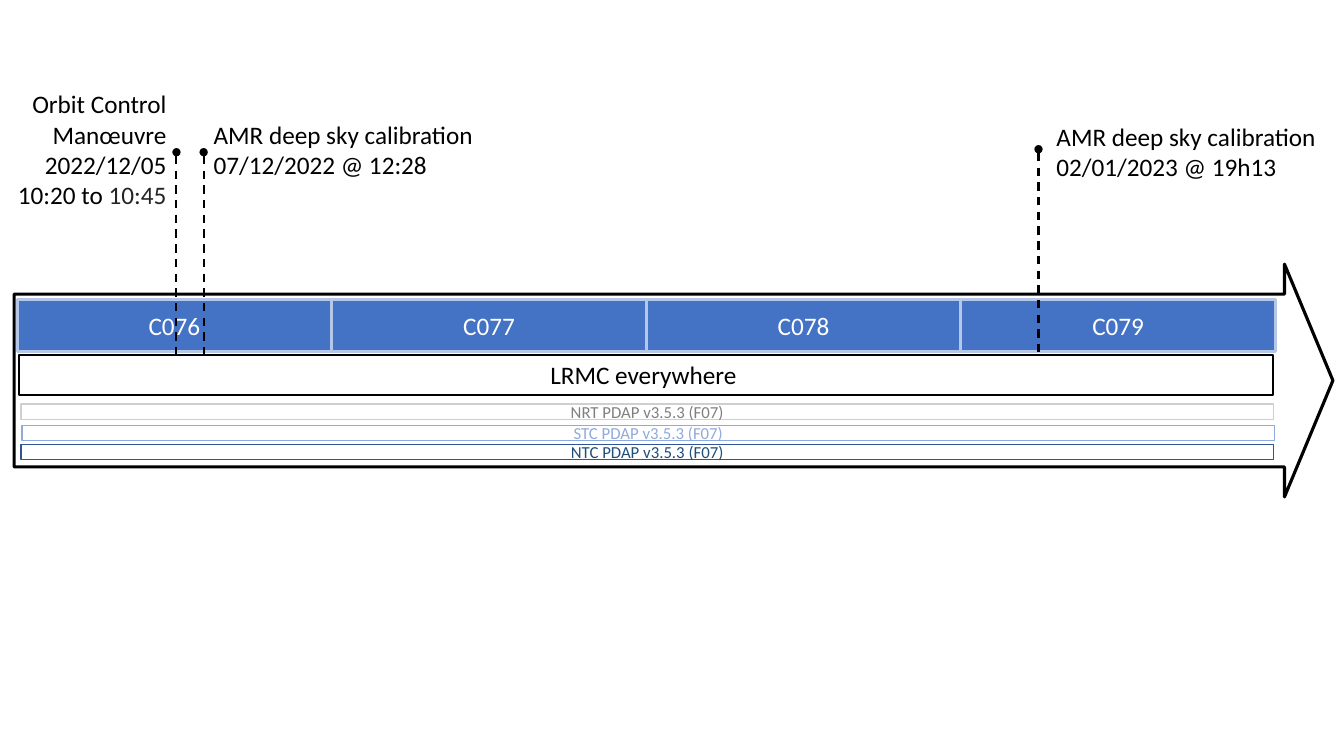
from lxml import etree
from pptx import Presentation
from pptx.dml.color import RGBColor
from pptx.enum.dml import MSO_LINE
from pptx.enum.shapes import MSO_CONNECTOR, MSO_SHAPE
from pptx.enum.text import MSO_ANCHOR, PP_ALIGN
from pptx.oxml.ns import qn
from pptx.util import Inches, Pt

COLORS = {
    "black": "000000", "white": "FFFFFF", "ink": "242424",
    "cycle": "4472C4", "cycle_line": "B4C7E7",
    "nrt": "808080", "nrt_line": "D0CECE", "stc": "8FAADC",
    "ntc": "1F4E79", "ntc_line": "2F5597",
}


def rgb(name):
    return RGBColor.from_string(COLORS[name])


def add_box(shape, x, y, w, h, fill, line, width, text="", size=18, color="black"):
    sp = s.shapes.add_shape(shape, Inches(x), Inches(y), Inches(w), Inches(h))
    sp.shadow.inherit = False
    sp.fill.solid()
    sp.fill.fore_color.rgb = rgb(fill)
    sp.line.color.rgb = rgb(line)
    sp.line.width = Pt(width)
    if text:
        tf = sp.text_frame
        tf.word_wrap = True
        tf.vertical_anchor = MSO_ANCHOR.MIDDLE
        p = tf.paragraphs[0]
        p.text = text
        p.alignment = PP_ALIGN.CENTER
        p.font.name, p.font.size = "Calibri", Pt(size)
        p.font.color.rgb = rgb(color)
    return sp


prs = Presentation()
prs.slide_width, prs.slide_height = Inches(13.33), Inches(7.5)
s = prs.slides.add_slide(prs.slide_layouts[6])

# Timeline arrow
arrow = add_box(MSO_SHAPE.RIGHT_ARROW, 0.14, 2.62, 13.08, 2.31, "white", "black", 2.25)
arrow.adjustments[0] = 0.742
arrow.adjustments[1] = 0.208

# Cycles
for i, cycle in enumerate(["C076", "C077", "C078", "C079"]):
    add_box(MSO_SHAPE.RECTANGLE, 0.17 + 3.12 * i, 2.97, 3.12, 0.52,
            "cycle", "cycle_line", 2.25, cycle, color="white")

# Tracking mode
mode = add_box(MSO_SHAPE.RECTANGLE, 0.19, 3.52, 12.44, 0.4,
               "white", "black", 1.5, "LRMC everywhere ")
mode.text_frame.vertical_anchor = MSO_ANCHOR.TOP

# Processing versions
versions = [("NRT", 0.21, 4.01, "nrt", "nrt_line"),
            ("STC", 0.22, 4.22, "stc", "stc"),
            ("NTC", 0.21, 4.41, "ntc", "ntc_line")]
for product, x, y, color, line in versions:
    add_box(MSO_SHAPE.RECTANGLE, x, y, 12.42, 0.15, "white", line, 1,
            f"{product} PDAP v3.5.3 (F07)", 12, color)

# Event labels: each paragraph is a list of (text, colour) runs
calibration = [("AMR deep sky calibration", "black")]
events = [
    (0, 0.83, 1.75, 1.31, PP_ALIGN.RIGHT,
     [[("Orbit Control Manœuvre", "black")],
      [("2022/12/05 10:20 to ", "black"), ("10:45", "ink")]]),
    (2.02, 1.13, 2.95, 0.71, PP_ALIGN.LEFT,
     [calibration, [("07/12/2022 @ 12:28", "black")]]),
    (10.38, 1.15, 2.95, 0.71, PP_ALIGN.LEFT,
     [calibration, [("02/01/2023 @ 19h13", "black")]]),
]
for x, y, w, h, align, paragraphs in events:
    tf = s.shapes.add_textbox(Inches(x), Inches(y), Inches(w), Inches(h)).text_frame
    tf.word_wrap = True
    for i, runs in enumerate(paragraphs):
        p = tf.add_paragraph() if i else tf.paragraphs[0]
        p.alignment = align
        p.font.name, p.font.size = "Calibri", Pt(18)
        for text, color in runs:
            r = p.add_run()
            r.text = text
            r.font.color.rgb = rgb(color)

# Event markers with a dot on top
for x, y in [(1.75, 1.51), (2.02, 1.51), (10.3, 1.48)]:
    marker = s.shapes.add_connector(MSO_CONNECTOR.STRAIGHT, Inches(x), Inches(y),
                                    Inches(x), Inches(y + 2.01))
    marker.line.color.rgb = rgb("black")
    marker.line.width = Pt(1.5)
    marker.line.dash_style = MSO_LINE.DASH
    etree.SubElement(marker.line._get_or_add_ln(), qn("a:headEnd"), type="oval")
    etree.SubElement(marker._element.spPr, qn("a:effectLst"))

prs.save("out.pptx")
